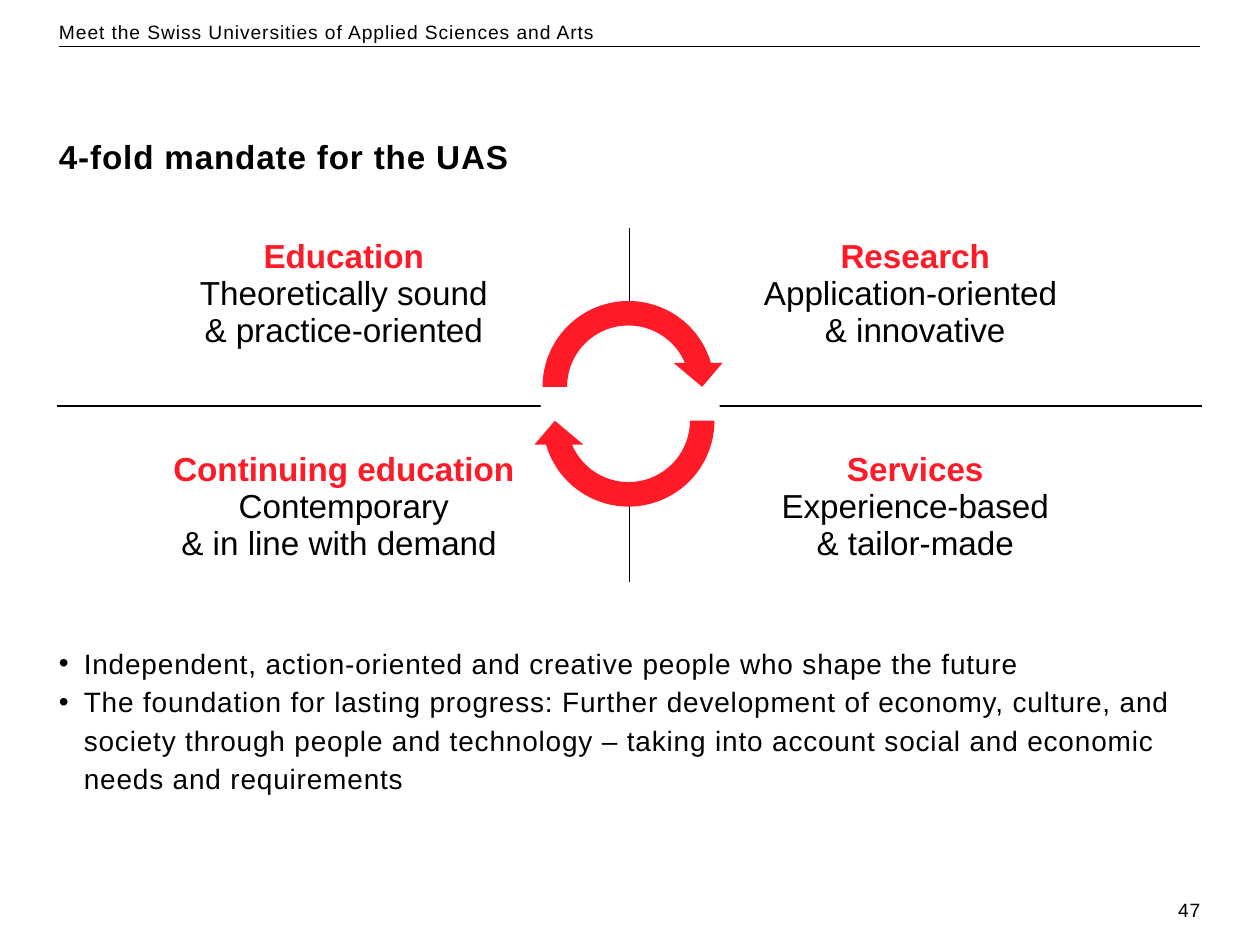
import pptx
import pptx.dml.color
import pptx.enum.shapes
import pptx.enum.text
import pptx.oxml.ns
import pptx.util
from lxml import etree

Cm = pptx.util.Cm
Pt = pptx.util.Pt
qn = pptx.oxml.ns.qn
ALIGN = pptx.enum.text.PP_ALIGN
SHAPE = pptx.enum.shapes.MSO_SHAPE

BLACK = pptx.dml.color.RGBColor(0x00, 0x00, 0x00)
WHITE = pptx.dml.color.RGBColor(0xFF, 0xFF, 0xFF)
RED = pptx.dml.color.RGBColor(0xFF, 0x1A, 0x27)

LEFT, WIDTH = 1.19, 23.01
MANDATES = [
    [("Education", "Theoretically sound", "& practice-oriented"),
     ("Research", "Application-oriented ", "& innovative")],
    [("Continuing education", "Contemporary", "& in line with demand "),
     ("Services", "Experience-based", "& tailor-made")],
]
GOALS = [
    "Independent, action-oriented and creative people who shape the future",
    "The foundation for lasting progress: Further development of economy, culture, "
    "and society through people and technology – taking into account social and "
    "economic needs and requirements",
]


def add_span(para, text, size, color=BLACK, bold=False):
    span = para.add_run()
    span.text = text
    span.font.name = "Arial"
    span.font.size = Pt(size)
    span.font.bold = bold
    span.font.color.rgb = color
    return span


def add_bullet(para, indent):
    properties = para._p.get_or_add_pPr()
    properties.set("marL", str(indent))
    properties.set("indent", str(-indent))
    etree.SubElement(properties, qn("a:buFont"), typeface="Arial")
    etree.SubElement(properties, qn("a:buChar"), char="•")


def add_text(page, place, lines, size, leading, bold=False, align=ALIGN.LEFT, bullets=False):
    """Add a marginless box of slightly spaced-out text, one paragraph per line."""
    box = page.shapes.add_textbox(*map(Cm, place))
    frame = box.text_frame
    frame.word_wrap = True
    frame.margin_left = frame.margin_top = frame.margin_right = frame.margin_bottom = 0
    for index, line in enumerate(lines):
        para = frame.add_paragraph() if index else frame.paragraphs[0]
        if bullets:
            add_bullet(para, Cm(0.5))
        para.alignment = align
        para.line_spacing = Pt(leading)
        span = add_span(para, line, size, bold=bold)
        span._r.get_or_add_rPr().set("spc", "50")


def add_rule(page, left, top, width):
    rule = page.shapes.add_connector(
        pptx.enum.shapes.MSO_CONNECTOR.STRAIGHT, Cm(left), Cm(top), Cm(left + width), Cm(top))
    rule.line.color.rgb = BLACK
    rule.line.width = Pt(0.6)
    etree.SubElement(rule._element.spPr, qn("a:effectLst"))


def set_borders(cell, colors):
    """Draw the left, right, top and bottom borders, in that order."""
    properties = cell._tc.get_or_add_tcPr()
    for side, color in zip(("lnL", "lnR", "lnT", "lnB"), colors):
        line = etree.SubElement(properties, qn("a:" + side), w=str(Pt(1)))
        fill = etree.SubElement(line, qn("a:solidFill"))
        etree.SubElement(fill, qn("a:srgbClr"), val=str(color))


def add_mandate_table(page):
    """Add the two-by-two table whose only visible borders form a cross."""
    frame = page.shapes.add_table(2, 2, Cm(1.17), Cm(4.62), Cm(23.04), Cm(7.12))
    table = frame.table
    table.first_row = table.horz_banding = False
    for row, mandates in enumerate(MANDATES):
        for column, lines in enumerate(mandates):
            cell = table.cell(row, column)
            side = (WHITE, BLACK) if column == 0 else (BLACK, WHITE)
            edge = (WHITE, BLACK) if row == 0 else (BLACK, WHITE)
            set_borders(cell, side + edge)
            cell.fill.background()
            cell.margin_left = cell.margin_right = Cm(0.36)
            cell.margin_top = Cm(0.18 if row == 0 else 0.93)
            cell.margin_bottom = Cm(0.18)
            for index, line in enumerate(lines):
                para = cell.text_frame.add_paragraph() if index else cell.text_frame.paragraphs[0]
                para.alignment = ALIGN.CENTER
                heading = index == 0
                add_span(para, line, 19, RED if heading else BLACK, heading)


def add_filled_shape(shapes, kind, place, color):
    shape = shapes.add_shape(kind, *map(Cm, place))
    shape.shadow.inherit = False
    shape.fill.solid()
    shape.fill.fore_color.rgb = color
    shape.line.fill.background()
    return shape


def add_cycle(page):
    """Add two half-circle arrows around a disc that hides the table's centre."""
    add_filled_shape(page.shapes, SHAPE.OVAL, (10.9, 6.12, 3.61, 3.99), WHITE)
    cycle = page.shapes.add_group_shape()
    for top, rotation in ((5.82, 0), (6.5, 180)):
        arrow = add_filled_shape(
            cycle.shapes, SHAPE.CIRCULAR_ARROW, (10.69, top, 3.96, 3.96), RED)
        arrow.rotation = rotation


def main():
    deck = pptx.Presentation()
    deck.slide_width, deck.slide_height = Cm(25.4), Cm(19.05)
    page = deck.slides.add_slide(deck.slide_layouts[6])

    add_rule(page, LEFT, 0.94, WIDTH)
    add_text(page, (LEFT, 0.41, WIDTH, 0.94),
             ["Meet the Swiss Universities of Applied Sciences and Arts"], 11, 13.2)
    add_text(page, (LEFT, 2.74, WIDTH, 1.07),
             ["4-fold mandate for the UAS"], 19, 22.8, bold=True)
    add_text(page, (22.7, 18.11, 1.5, 0.51), ["47"], 11, 13.2, align=ALIGN.RIGHT)
    add_text(page, (LEFT, 12.93, WIDTH, 3.96), GOALS, 16, 22, bullets=True)
    add_mandate_table(page)
    add_cycle(page)

    deck.save("out.pptx")


if __name__ == "__main__":
    main()
